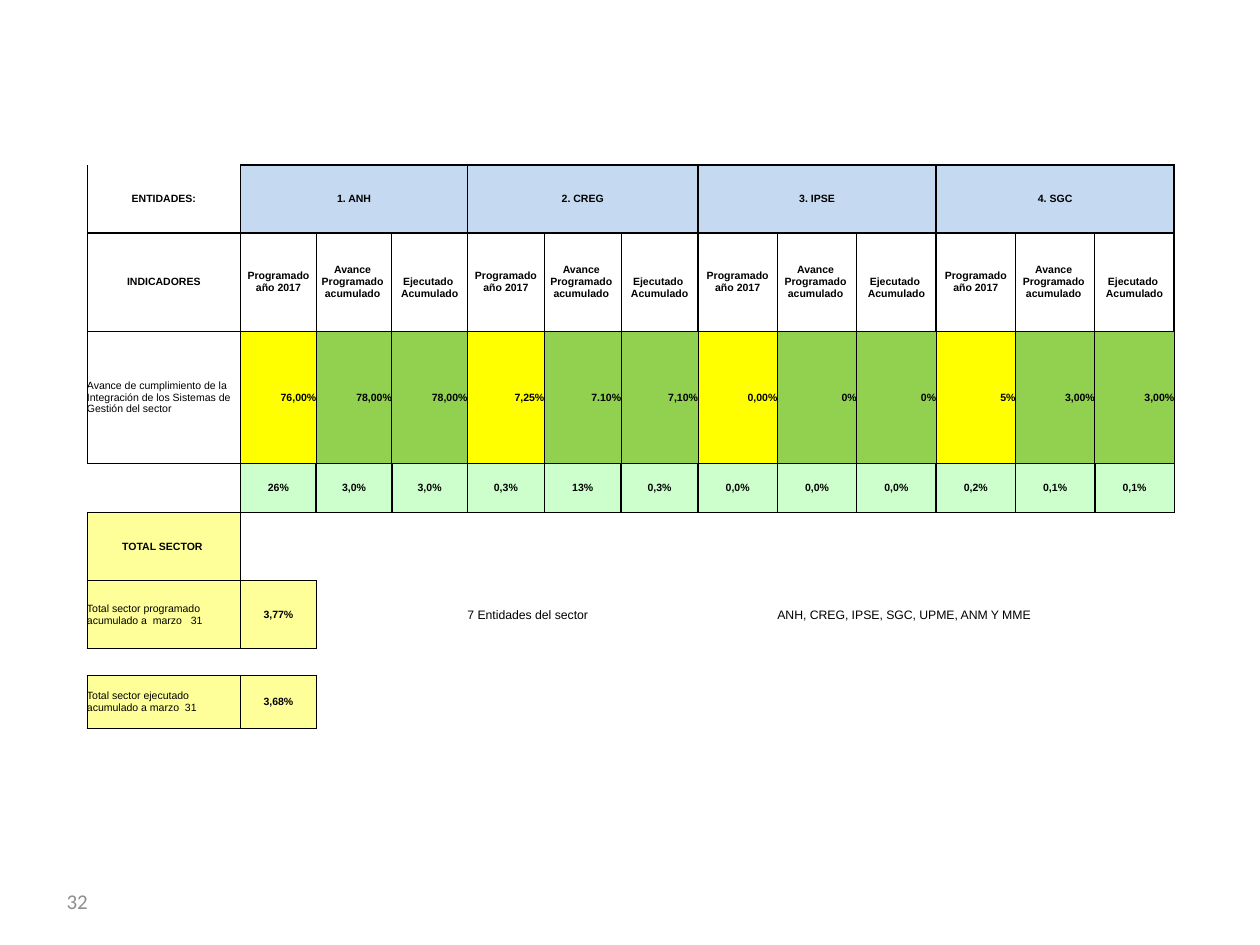
from lxml.etree import SubElement as Sub
from pptx import Presentation
from pptx.dml.color import RGBColor as RGB
from pptx.enum.text import MSO_ANCHOR as Anchor, PP_ALIGN as Align
from pptx.oxml.ns import qn
from pptx.util import Inches, Pt

HUE = {"ink": "000000", "gray": "8E8E8E", "blue": "C5D9F1", "gold": "FFFF00",
       "green": "92D050", "mint": "CCFFCC", "cream": "FFFF99"}
PLAIN = "{2D5ABB26-0587-4C30-8999-92F81FD0307C}"

deck = Presentation()
deck.slide_width, deck.slide_height = Inches(10), Inches(7.5)
slide = deck.slides.add_slide(deck.slide_layouts[6])

cols = [1.22] + [0.6] * 3 + [0.61] * 3 + [0.63] * 6
rows = [0.54, 0.78, 1.05, 0.39, 0.54, 0.54, 0.21, 0.42]
heads = ["Programado año 2017", "Avance \vProgramado  acumulado ",
         "\vEjecutado  Acumulado"]
goals = ["76,00%", "78,00%", "78,00%", "7,25%", "7.10%", "7,10%",
         "0,00%", "0%", "0%", "5%", "3,00%", "3,00%"]
shares = ["26%", "3,0%", "3,0%", "0,3%", "13%", "0,3%",
          "0,0%", "0,0%", "0,0%", "0,2%", "0,1%", "0,1%"]
words = [
    ["ENTIDADES:", "1. ANH", "", "", "2. CREG", "", "", "3. IPSE", "", "", "4. SGC"],
    ["INDICADORES"] + heads * 4,
    ["Avance de cumplimiento de la Integración de los Sistemas de Gestión del sector"]
    + goals,
    [""] + shares,
    ["TOTAL SECTOR "],
    ["Total sector programado acumulado a  marzo   31", "3,77%", "", "",
     "7 Entidades del sector", "", "", "", "ANH, CREG, IPSE, SGC, UPME, ANM Y MME"],
    [],
    ["Total sector ejecutado acumulado a marzo  31", "3,68%"],
]

frame = slide.shapes.add_table(len(rows), len(cols), Inches(0.69), Inches(1.31),
                               Inches(sum(cols)), Inches(sum(rows)))
table = frame.table
table.first_row = table.horz_banding = False
table._tbl.tblPr.find(qn("a:tableStyleId")).text = PLAIN
for col, wide in zip(table.columns, cols):
    col.width = Inches(wide)
for row, high in zip(table.rows, rows):
    row.height = Inches(high)
spans = [(0, c, 3) for c in (1, 4, 7, 10)] + [(5, 4, 2), (5, 8, 4)]
for r, c, n in spans:
    table.cell(r, c).merge(table.cell(r, c + n - 1))


def rim(cell, **sides):
    props = cell._tc.get_or_add_tcPr()
    for side in "LRTB":
        if sides[side]:
            line = Sub(props, qn("a:ln" + side), w=str(Pt(sides[side])))
            Sub(Sub(line, qn("a:solidFill")), qn("a:srgbClr"), val=HUE["ink"])


def style(par, size, bold, face, hue, align):
    par.alignment = align
    par.font.size, par.font.bold, par.font.name = Pt(size), bold, face
    par.font.color.rgb = RGB.from_string(HUE[hue])


for r in range(len(rows)):
    for c in range(len(cols)):
        cell = table.cell(r, c)
        cell.margin_left = cell.margin_right = 0
        cell.margin_top = cell.margin_bottom = 0
        cell.vertical_anchor = Anchor.MIDDLE
        thin = dict.fromkeys("LRTB", 0.5)
        if r == 0:
            rim(cell, L=1 if c else 0.5, R=1, T=1 if c else 0, B=1)
        elif r == 1:
            rim(cell, L=1 if c % 3 == 1 else 0.5, R=0.5 if c % 3 else 1, T=1, B=0.5)
        elif r == 3:
            rim(cell, L=1 if c else 0, R=0.5 if c == 12 else 1, T=0.5, B=0.5)
        elif r == 2 or (r == 4 and c == 0) or (r in (5, 7) and c < 2):
            rim(cell, **thin)

        tone = None
        if r in (0, 3) and c:
            tone = "mint" if r else "blue"
        elif r == 2 and c:
            tone = "gold" if c % 3 == 1 else "green"
        elif (r == 4 and c == 0) or (r in (5, 7) and c < 2):
            tone = "cream"
        if tone:
            cell.fill.solid()
            cell.fill.fore_color.rgb = RGB.from_string(HUE[tone])
        else:
            cell.fill.background()

        word = words[r][c] if c < len(words[r]) else ""
        par = cell.text_frame.paragraphs[0]
        if not word:
            Sub(par._p, qn("a:endParaRPr"), sz="600")
            continue
        par.text = word
        note = r == 5 and c > 1
        left = note or (c == 0 and r in (2, 5, 7))
        align = Align.LEFT if left else Align.RIGHT if r == 2 else Align.CENTER
        style(par, 7 if note else 6, not left, "Arial", "ink", align)

page = slide.shapes.add_textbox(Inches(0.43), Inches(6.95), Inches(2.33), Inches(0.4))
page.text_frame.word_wrap = True
page.text_frame.vertical_anchor = Anchor.MIDDLE
page.text_frame.text = "32"
style(page.text_frame.paragraphs[0], 12, False, "Calibri", "gray", Align.LEFT)

deck.save("out.pptx")
